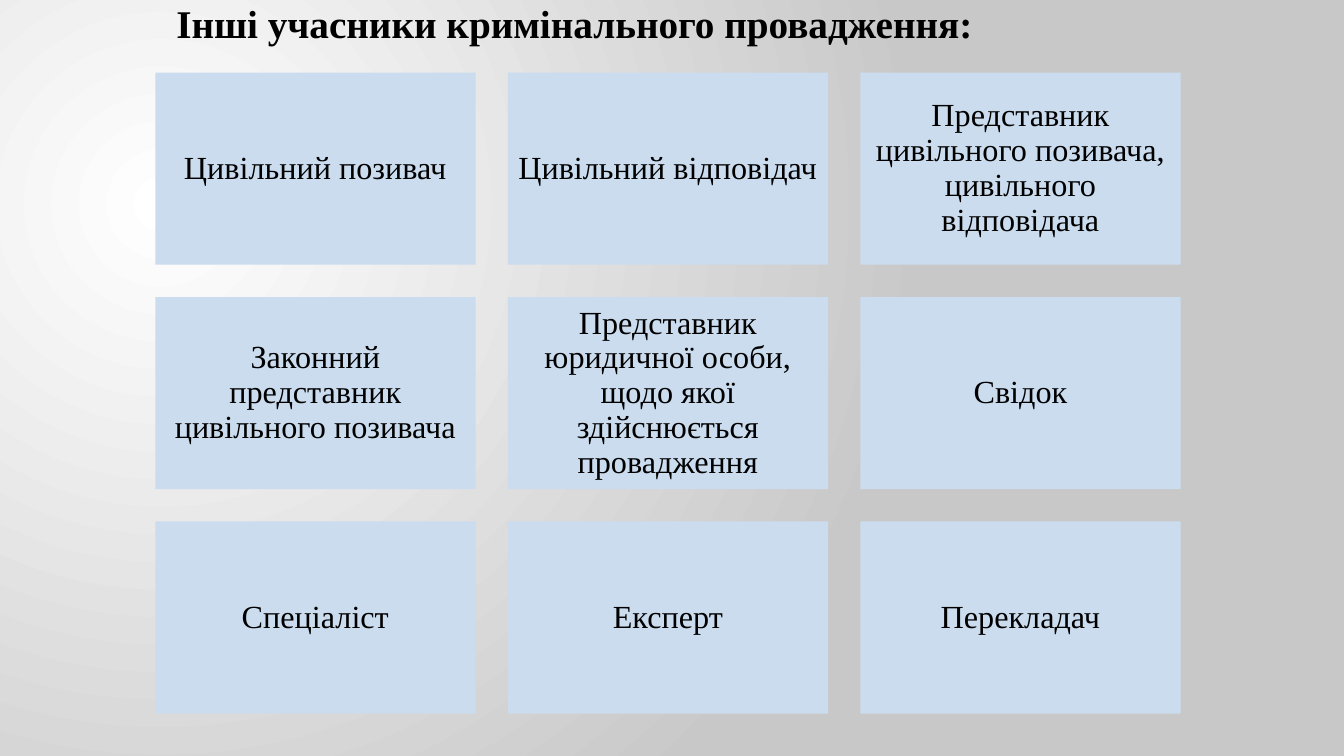
from dataclasses import dataclass

from lxml import etree
from pptx import Presentation
from pptx.dml.color import RGBColor
from pptx.enum.shapes import MSO_SHAPE
from pptx.enum.text import MSO_ANCHOR, PP_ALIGN
from pptx.oxml.ns import qn
from pptx.util import Inches, Pt


@dataclass(frozen=True)
class Theme:
    font: str = "Times New Roman"
    title_size: int = 28
    card_size: int = 23
    ink: RGBColor = RGBColor(0x00, 0x00, 0x00)
    card: RGBColor = RGBColor(0xCA, 0xDC, 0xEE)
    glow: RGBColor = RGBColor(0xFF, 0xFF, 0xFF)
    shade: RGBColor = RGBColor(0xC8, 0xC8, 0xC8)


THEME = Theme()
TITLE = "Інші учасники кримінального провадження:"
PARTICIPANTS = [
    ["Цивільний позивач", "Цивільний відповідач",
     "Представник цивільного позивача, цивільного відповідача"],
    ["Законний представник цивільного позивача",
     "Представник юридичної особи, щодо якої здійснюється провадження",
     "Свідок"],
    ["Спеціаліст", "Експерт", "Перекладач"],
]


def write(frame, text, size, bold=False):
    """Fill a frame with one styled paragraph and return it."""
    frame.word_wrap = True
    para = frame.paragraphs[0]
    para.text = text
    font = para.runs[0].font
    font.name, font.size, font.bold = THEME.font, Pt(size), bold
    font.color.rgb = THEME.ink
    return para


def paint_background(page):
    """Circular glow from the upper left."""
    fill = page.background.fill
    fill.gradient()
    for stop, color in zip(fill.gradient_stops, (THEME.glow, THEME.shade)):
        stop.color.rgb = color
    gradient = page.element.find(".//" + qn("a:gradFill"))
    gradient.remove(gradient.find(qn("a:lin")))
    circle = etree.SubElement(gradient, qn("a:path"), path="circle")
    etree.SubElement(circle, qn("a:fillToRect"),
                     l="50000", t="55000", r="125000", b="100000")


def add_title(page, left, top, width, height):
    box = page.shapes.add_textbox(
        Inches(left), Inches(top), Inches(width), Inches(height))
    para = write(box.text_frame, TITLE, THEME.title_size, bold=True)
    para.space_before = Pt(10)
    para.line_spacing = 0.9


def add_card(page, text, left, top, width, height):
    card = page.shapes.add_shape(
        MSO_SHAPE.RECTANGLE,
        Inches(left), Inches(top), Inches(width), Inches(height))
    card.shadow.inherit = False
    card.fill.solid()
    card.fill.fore_color.rgb = THEME.card
    card.line.fill.background()
    frame = card.text_frame
    frame.vertical_anchor = MSO_ANCHOR.MIDDLE
    frame.margin_left = frame.margin_right = Inches(0.1)
    frame.margin_top = frame.margin_bottom = Inches(0.1)
    para = write(frame, text, THEME.card_size)
    para.alignment = PP_ALIGN.CENTER
    para.line_spacing = 0.9


def add_card_grid(page, left, top, width, height, gap):
    """Equal cards in rows and columns filling the given box."""
    rows, columns = len(PARTICIPANTS), len(PARTICIPANTS[0])
    card_width = (width - gap * (columns - 1)) / columns
    card_height = (height - gap * (rows - 1)) / rows
    for row, names in enumerate(PARTICIPANTS):
        for column, name in enumerate(names):
            add_card(page, name,
                     left + column * (card_width + gap),
                     top + row * (card_height + gap),
                     card_width, card_height)


def main():
    deck = Presentation()
    deck.slide_width, deck.slide_height = Inches(13.33), Inches(7.5)
    page = deck.slides.add_slide(deck.slide_layouts[6])
    paint_background(page)
    add_title(page, 1.65, 0, 10.49, 0.72)
    add_card_grid(page, 1.54, 0.72, 10.17, 6.36, gap=0.32)
    deck.save("out.pptx")


if __name__ == "__main__":
    main()
